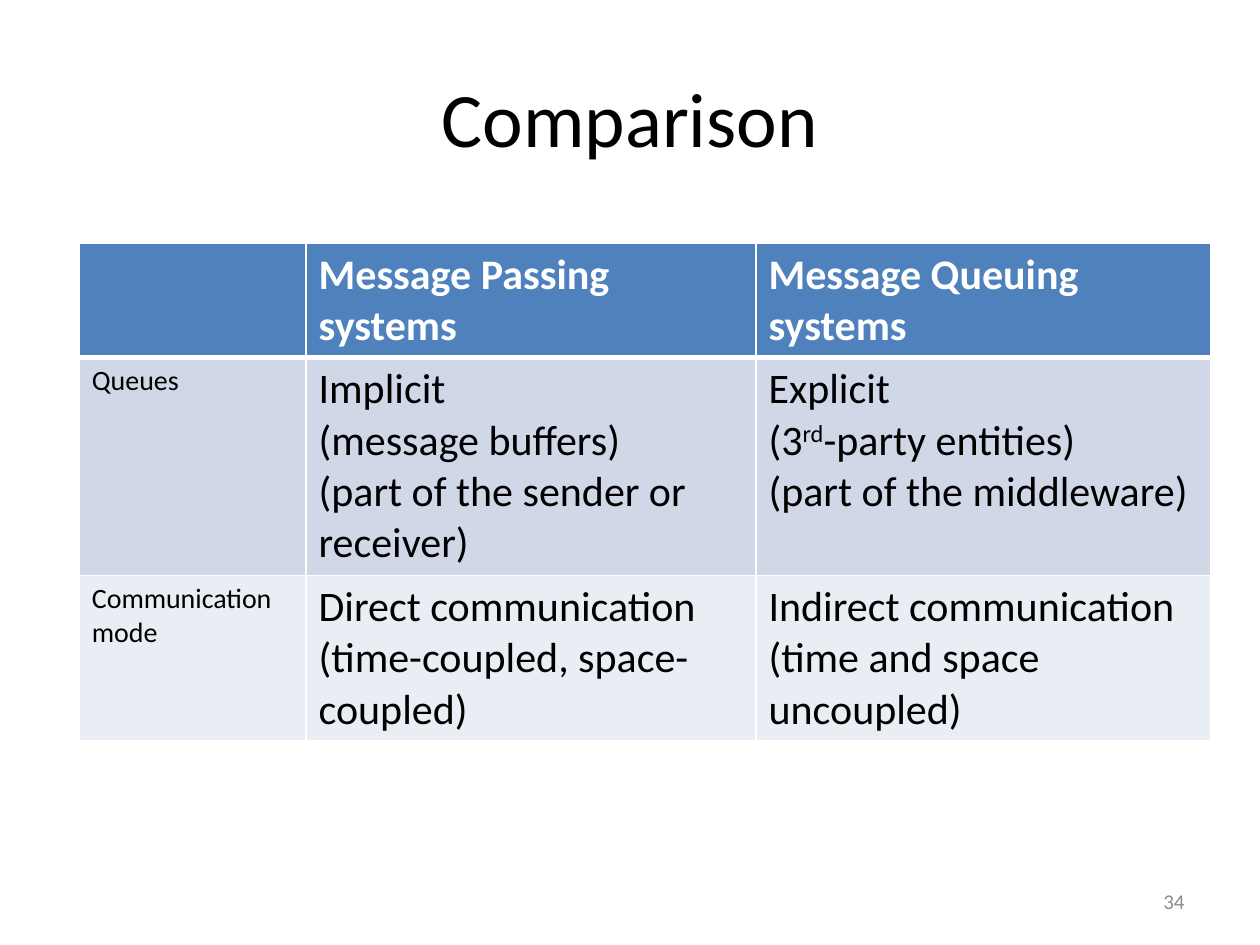
from dataclasses import dataclass

from lxml.etree import SubElement
from pptx import Presentation
from pptx.dml.color import RGBColor
from pptx.enum.text import MSO_ANCHOR, PP_ALIGN
from pptx.oxml.ns import qn
from pptx.slide import Slide
from pptx.table import _Cell
from pptx.text.text import _Paragraph
from pptx.util import Cm, Pt


@dataclass(frozen=True)
class Theme:
    font: str = "Calibri"
    text: str = "000000"
    muted: str = "8C8C8C"
    white: str = "FFFFFF"
    header: str = "4F81BD"
    bands: tuple[str, ...] = ("D0D8E8", "E9EDF4")
    title_size: int = 44
    body_size: int = 24
    label_size: int = 16
    number_size: int = 12
    thin: int = 1
    thick: int = 3


@dataclass(frozen=True)
class Superscript:
    text: str


@dataclass(frozen=True)
class Label:
    """A text standing alone in its own box, measured in centimetres."""
    text: str
    left: float
    top: float
    width: float
    height: float
    size: int
    color: str
    alignment: PP_ALIGN


@dataclass(frozen=True)
class ComparisonRow:
    """Each cell is a tuple of lines; each line is a tuple of pieces."""
    height: float
    cells: tuple


THEME = Theme()
LABELS = (
    Label("Comparison", 1.27, 0.76, 22.86, 3.18,
          THEME.title_size, THEME.text, PP_ALIGN.CENTER),
    Label("34", 18.21, 17.65, 5.92, 1.02,
          THEME.number_size, THEME.muted, PP_ALIGN.RIGHT),
)
COLUMN_WIDTHS = (4.57, 9.07, 9.17)
ROWS = (
    ComparisonRow(2.3, (
        (),
        (("Message Passing systems",),),
        (("Message Queuing systems",),),
    )),
    ComparisonRow(4.39, (
        (("Queues",),),
        (("Implicit",), ("(message buffers)",),
         ("(part of the sender or receiver)",)),
        (("Explicit",), ("(3", Superscript("rd"), "-party entities)"),
         ("(part of the middleware)",)),
    )),
    ComparisonRow(3.33, (
        (("Communication mode",),),
        (("Direct communication",), ("(time-coupled, space-coupled)",)),
        (("Indirect communication",), ("(time and space uncoupled)",)),
    )),
)


def style_paragraph(paragraph: _Paragraph, size: int, color: str,
                    bold: bool = False) -> None:
    font = paragraph.font
    font.name = THEME.font
    font.size = Pt(size)
    font.bold = bold
    font.color.rgb = RGBColor.from_string(color)


def add_label(slide: Slide, label: Label) -> None:
    box = slide.shapes.add_textbox(
        Cm(label.left), Cm(label.top), Cm(label.width), Cm(label.height))
    frame = box.text_frame
    frame.word_wrap = True
    frame.vertical_anchor = MSO_ANCHOR.MIDDLE
    paragraph = frame.paragraphs[0]
    paragraph.text = label.text
    paragraph.alignment = label.alignment
    style_paragraph(paragraph, label.size, label.color)


def set_borders(cell: _Cell, top: int, bottom: int) -> None:
    """Draw white borders; call before filling, as the schema orders them so."""
    properties = cell._tc.get_or_add_tcPr()
    widths = {"lnL": THEME.thin, "lnR": THEME.thin, "lnT": top, "lnB": bottom}
    for side, width in widths.items():
        line = SubElement(properties, qn(f"a:{side}"), w=str(Pt(width)))
        fill = SubElement(line, qn("a:solidFill"))
        SubElement(fill, qn("a:srgbClr"), val=THEME.white)


def write_lines(cell: _Cell, lines: tuple, size: int, color: str,
                bold: bool) -> None:
    frame = cell.text_frame
    for index, pieces in enumerate(lines):
        paragraph = frame.add_paragraph() if index else frame.paragraphs[0]
        style_paragraph(paragraph, size, color, bold)
        for piece in pieces:
            run = paragraph.add_run()
            if isinstance(piece, Superscript):
                run.text = piece.text
                run._r.get_or_add_rPr().set("baseline", "30000")
            else:
                run.text = piece


def add_comparison_table(slide: Slide) -> None:
    table = slide.shapes.add_table(
        len(ROWS), len(COLUMN_WIDTHS), Cm(1.6), Cm(4.91),
        Cm(sum(COLUMN_WIDTHS)), Cm(sum(row.height for row in ROWS))).table
    for column, width in zip(table.columns, COLUMN_WIDTHS):
        column.width = Cm(width)
    for row_index, row in enumerate(ROWS):
        table.rows[row_index].height = Cm(row.height)
        is_header = row_index == 0
        background = THEME.header if is_header else THEME.bands[row_index - 1]
        for column_index, lines in enumerate(row.cells):
            cell = table.cell(row_index, column_index)
            set_borders(cell,
                        top=THEME.thick if row_index == 1 else THEME.thin,
                        bottom=THEME.thick if is_header else THEME.thin)
            cell.fill.solid()
            cell.fill.fore_color.rgb = RGBColor.from_string(background)
            write_lines(cell, lines,
                        THEME.body_size if column_index else THEME.label_size,
                        THEME.white if is_header else THEME.text, is_header)


def main() -> None:
    presentation = Presentation()
    presentation.slide_width = Cm(25.4)
    presentation.slide_height = Cm(19.05)
    slide = presentation.slides.add_slide(presentation.slide_layouts[6])
    for label in LABELS:
        add_label(slide, label)
    add_comparison_table(slide)
    presentation.save("out.pptx")


if __name__ == "__main__":
    main()
